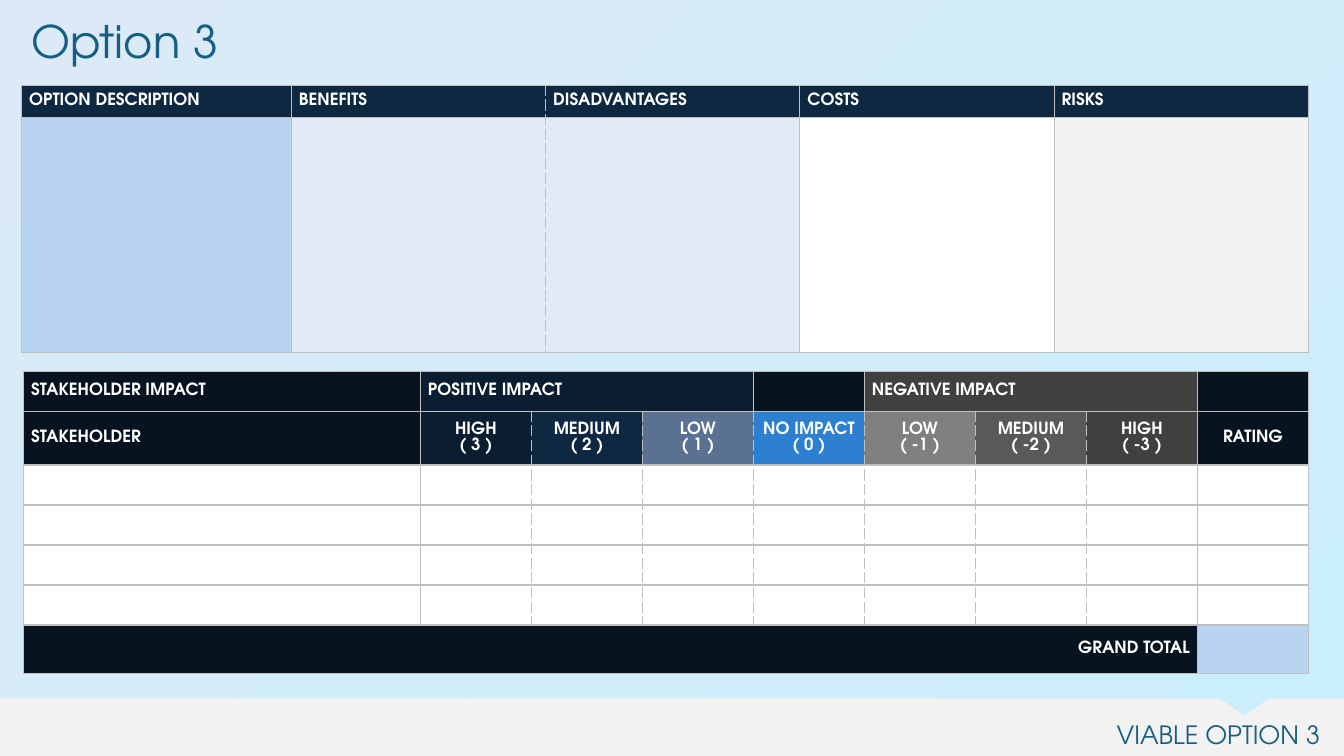
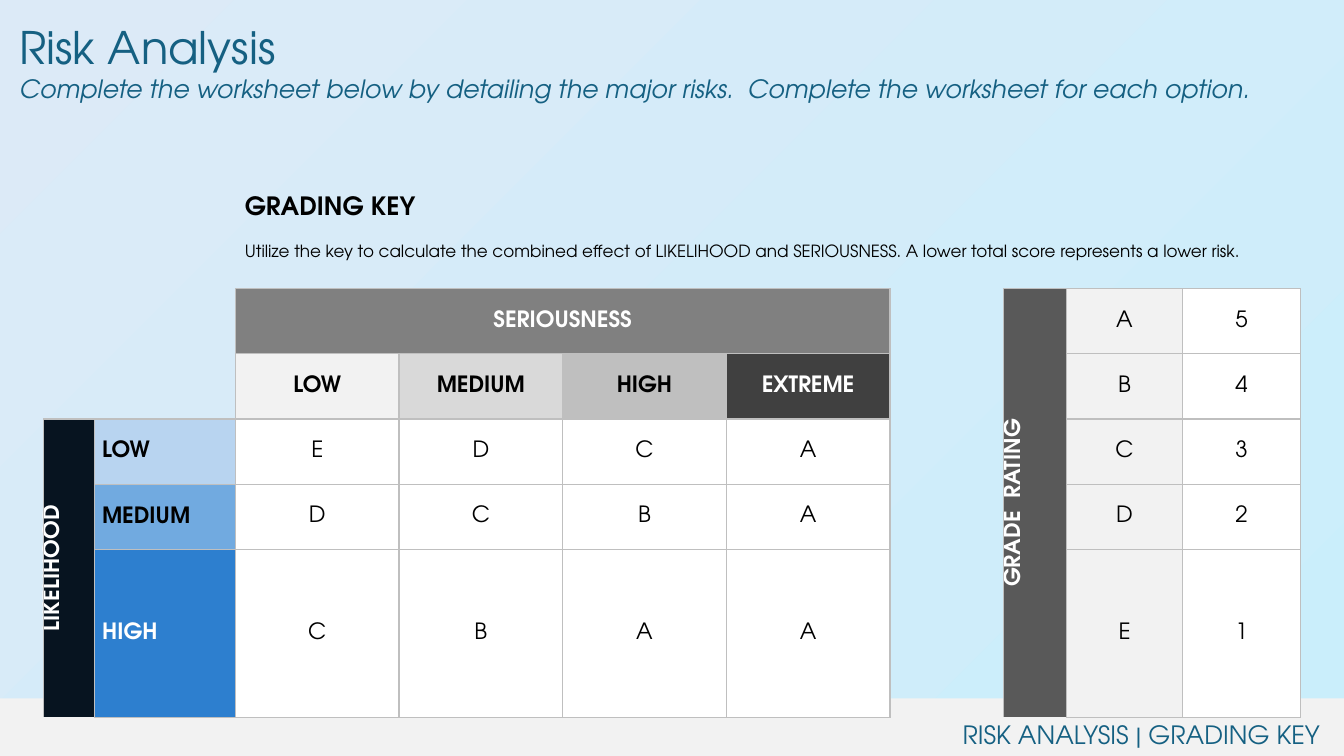
from dataclasses import dataclass

from lxml import etree
from pptx import Presentation
from pptx.dml.color import RGBColor
from pptx.enum.text import MSO_ANCHOR, MSO_AUTO_SIZE, PP_ALIGN
from pptx.oxml.ns import qn
from pptx.slide import Slide
from pptx.util import Pt

LEFT, MID, RIGHT = PP_ALIGN.LEFT, PP_ALIGN.CENTER, PP_ALIGN.RIGHT
TOP, CENTER = MSO_ANCHOR.TOP, MSO_ANCHOR.MIDDLE
GROW = MSO_AUTO_SIZE.SHAPE_TO_FIT_TEXT
FONT = "TeX Gyre Adventor"
PLAIN = "{2D5ABB26-0587-4C30-8999-92F81FD0307C}"
WIDE, HIGH = 960, 540
INK = {
    "aqua": "CAEEFB", "mist": "DCEAF7", "teal": "156082",
    "night": "071420", "deep": "0B1E31", "navy": "0E2841",
    "slate": "5B7191", "blue": "2D7FCF", "sky": "71AAE0",
    "pale": "B8D4F0", "ice": "E3EAF6", "white": "FFFFFF",
    "black": "000000", "fog": "F2F2F2", "light": "D9D9D9",
    "rule": "BFBFBF", "gray": "808080", "dim": "595959", "coal": "404040",
}


@dataclass
class Line:
    text: str
    size: float
    tint: str = "teal"
    bold: bool = False
    slant: bool = False
    gap: float = 0


@dataclass
class Cell:
    text: str = ""
    fill: str = ""
    align: PP_ALIGN = LEFT
    tint: str = "white"
    bold: bool = True
    span: tuple[int, int] = (1, 1)
    turn: bool = False
    anchor: MSO_ANCHOR = CENTER


@dataclass
class Sheet:
    left: float
    top: float
    cols: list[float]
    rows: list[float]
    cells: list[list[Cell | None]]
    size: float
    dashed: frozenset[tuple[int, int]] = frozenset()


def tone(name: str) -> RGBColor:
    return RGBColor.from_string(INK[name])


def style(para, line: Line, align: PP_ALIGN) -> None:
    para.alignment = align
    for run in para.runs:
        font = run.font
        font.name, font.size = FONT, Pt(line.size)
        font.bold, font.italic = line.bold, line.slant
        font.color.rgb = tone(line.tint)


def write(slide: Slide, box: tuple[float, ...], lines: list[Line],
          align: PP_ALIGN = LEFT) -> None:
    frame = slide.shapes.add_textbox(*map(Pt, box)).text_frame
    frame.word_wrap = True
    frame.auto_size = GROW
    frame.text = "\n".join(line.text for line in lines)
    for para, line in zip(frame.paragraphs, lines):
        style(para, line, align)
        para.space_before = Pt(line.gap)


def border(cell, side: str, place: int, dash: bool) -> None:
    edge = etree.Element(qn("a:ln" + side), w=str(Pt(1)))
    paint = etree.SubElement(edge, qn("a:solidFill"))
    etree.SubElement(paint, qn("a:srgbClr"), val=INK["rule"])
    etree.SubElement(edge, qn("a:prstDash"), val="dash" if dash else "solid")
    cell._tc.get_or_add_tcPr().insert(place, edge)


def fill_cell(cell, data: Cell) -> None:
    cell.margin_left = cell.margin_right = Pt(5.4)
    cell.margin_top = cell.margin_bottom = 0
    cell.vertical_anchor = data.anchor
    if data.fill:
        cell.fill.solid()
        cell.fill.fore_color.rgb = tone(data.fill)
    else:
        cell.fill.background()
    if data.turn:
        cell._tc.get_or_add_tcPr().set("vert", "vert270")


def draw_sheet(slide: Slide, sheet: Sheet) -> None:
    frame = slide.shapes.add_table(
        len(sheet.rows), len(sheet.cols), Pt(sheet.left), Pt(sheet.top),
        Pt(sum(sheet.cols)), Pt(sum(sheet.rows)))
    grid = frame.table
    grid.first_row = grid.horz_banding = False
    for node in frame.element.iter(qn("a:tableStyleId")):
        node.text = PLAIN
    for col, wide in zip(grid.columns, sheet.cols):
        col.width = Pt(wide)
    for row, high in zip(grid.rows, sheet.rows):
        row.height = Pt(high)

    owner = {}
    for r, row in enumerate(sheet.cells):
        for c, data in enumerate(row):
            if data is None:
                continue
            down, over = data.span
            for y in range(r, r + down):
                for x in range(c, c + over):
                    owner[y, x] = (r, c)
            cell = grid.cell(r, c)
            if data.span != (1, 1):
                cell.merge(grid.cell(r + down - 1, c + over - 1))
            if data.text:
                cell.text_frame.text = data.text
                line = Line(data.text, sheet.size, data.tint, data.bold)
                for para in cell.text_frame.paragraphs:
                    style(para, line, data.align)

    def filled(spot: tuple[int, int]) -> bool:
        if spot not in owner:
            return False
        r, c = owner[spot]
        return bool(sheet.cells[r][c].fill)

    for (r, c), home in owner.items():
        cell = grid.cell(r, c)
        fill_cell(cell, sheet.cells[home[0]][home[1]])
        sides = {"L": (r, c - 1), "R": (r, c + 1),
                 "T": (r - 1, c), "B": (r + 1, c)}
        place = 0
        for side, near in sides.items():
            if owner.get(near) == home or not (filled((r, c)) or filled(near)):
                continue
            edge = (r, c + (side == "R"))
            border(cell, side, place, side in "LR" and edge in sheet.dashed)
            place += 1


def start(deck, footer: str) -> Slide:
    slide = deck.slides.add_slide(deck.slide_layouts[6])
    back = slide.background.fill
    back.gradient()
    back.gradient_angle = 135
    for stop, name in zip(back.gradient_stops, ("aqua", "mist")):
        stop.color.rgb = tone(name)
    y = 498.8
    notch = [(870.5, y), (889.2, 511.3), (906.5, y),
             (WIDE, y), (WIDE, HIGH), (0, HIGH)]
    pen = slide.shapes.build_freeform(Pt(0), Pt(y))
    pen.add_line_segments([(Pt(a), Pt(b)) for a, b in notch], close=True)
    band = pen.convert_to_shape()
    band.shadow.inherit = False
    band.fill.solid()
    band.fill.fore_color.rgb = tone("fog")
    band.line.fill.background()
    write(slide, (462, 510.2, 488, 29), [Line(footer, 18)], RIGHT)
    return slide


def option(deck) -> None:
    slide = start(deck, "VIABLE OPTION 3")
    heads = ["OPTION DESCRIPTION", "BENEFITS", "DISADVANTAGES", "COSTS", "RISKS"]
    fills = ["pale", "ice", "ice", "white", "fog"]
    draw_sheet(slide, Sheet(
        15.4, 60.9, [192.8] + [181.6] * 4, [22.8, 168.2],
        [[Cell(head, "navy") for head in heads],
         [Cell(fill=fill) for fill in fills]],
        12, frozenset({(0, 2), (1, 2)})))

    scale = [("HIGH", 3, "deep"), ("MEDIUM", 2, "navy"), ("LOW", 1, "slate"),
             ("NO IMPACT", 0, "blue"), ("LOW", -1, "gray"),
             ("MEDIUM", -2, "dim"), ("HIGH", -3, "coal")]
    blank = Cell(fill="night")
    groups = [Cell("STAKEHOLDER IMPACT", "night"),
              Cell("POSITIVE IMPACT", "deep", span=(1, 3)), None, None, blank,
              Cell("NEGATIVE IMPACT", "coal", span=(1, 3)), None, None, blank]
    grades = [Cell("STAKEHOLDER", "night"),
              *(Cell(f"{name}\n( {mark} )", fill, MID) for name, mark, fill in scale),
              Cell("RATING", "night", MID)]
    total = [Cell("GRAND TOTAL", "night", RIGHT, span=(1, 8)),
             *[None] * 7, Cell(fill="pale")]
    body = [[Cell(fill="white")] * 9 for _ in range(4)]
    draw_sheet(slide, Sheet(
        16.8, 265.2, [283.5] + [79.3] * 8, [28.5, 38.5] + [28.6] * 4 + [34.6],
        [groups, grades, *body, total], 12,
        frozenset((r, c) for r in range(1, 6) for c in range(2, 8))))
    write(slide, (15.4, 6.5, 166, 46), [Line("Option 3", 32)])


def risk(deck) -> None:
    slide = start(deck, "RISK ANALYSIS | GRADING KEY")
    levels = [("LOW", "fog", "black"), ("MEDIUM", "light", "black"),
              ("HIGH", "rule", "black"), ("EXTREME", "coal", "white")]
    odds = [("LOW", "pale", "black", "EDCA"), ("MEDIUM", "sky", "black", "DCBA"),
            ("HIGH", "blue", "white", "CBAA")]
    rows = [
        [Cell(span=(2, 2)), None,
         Cell("SERIOUSNESS", "gray", MID, span=(1, 4)), None, None, None,
         Cell(span=(5, 1)),
         Cell("GRADE  RATING", "dim", MID, span=(5, 1), turn=True)],
        [None, None, *(Cell(name, fill, MID, tint) for name, fill, tint in levels),
         None, None],
    ]
    for k, (name, fill, tint, marks) in enumerate(odds):
        side = None if k else Cell("LIKELIHOOD", "night", MID, span=(3, 1),
                                   turn=True, anchor=TOP)
        rows.append([side, Cell(name, fill, tint=tint),
                     *(Cell(mark, "white", MID, "black", False) for mark in marks),
                     None, None])
    for row, grade, score in zip(rows, "ABCDE", "54321"):
        row += [Cell(grade, "fog", MID, "black", False),
                Cell(score, "white", MID, "black", False)]
    draw_sheet(slide, Sheet(
        31, 206.2, [36.6, 100.6] + [116.9] * 4 + [81.2, 45, 82.8, 84.4],
        [46.6] * 5, rows, 16))
    write(slide, (167.8, 132.5, 898, 58), [
        Line("GRADING KEY", 18, "black", True),
        Line("Utilize the key to calculate the combined effect of LIKELIHOOD and "
             "SERIOUSNESS. A lower total score represents a lower risk.",
             12, "black", gap=14.4)])
    write(slide, (6.8, 10.5, 910, 68), [
        Line("Risk Analysis", 32),
        Line("Complete the worksheet below by detailing the major risks.  "
             "Complete the worksheet for each option.", 18, slant=True)])


def main() -> None:
    deck = Presentation()
    deck.slide_width, deck.slide_height = Pt(WIDE), Pt(HIGH)
    option(deck)
    risk(deck)
    deck.save("out.pptx")


if __name__ == "__main__":
    main()
